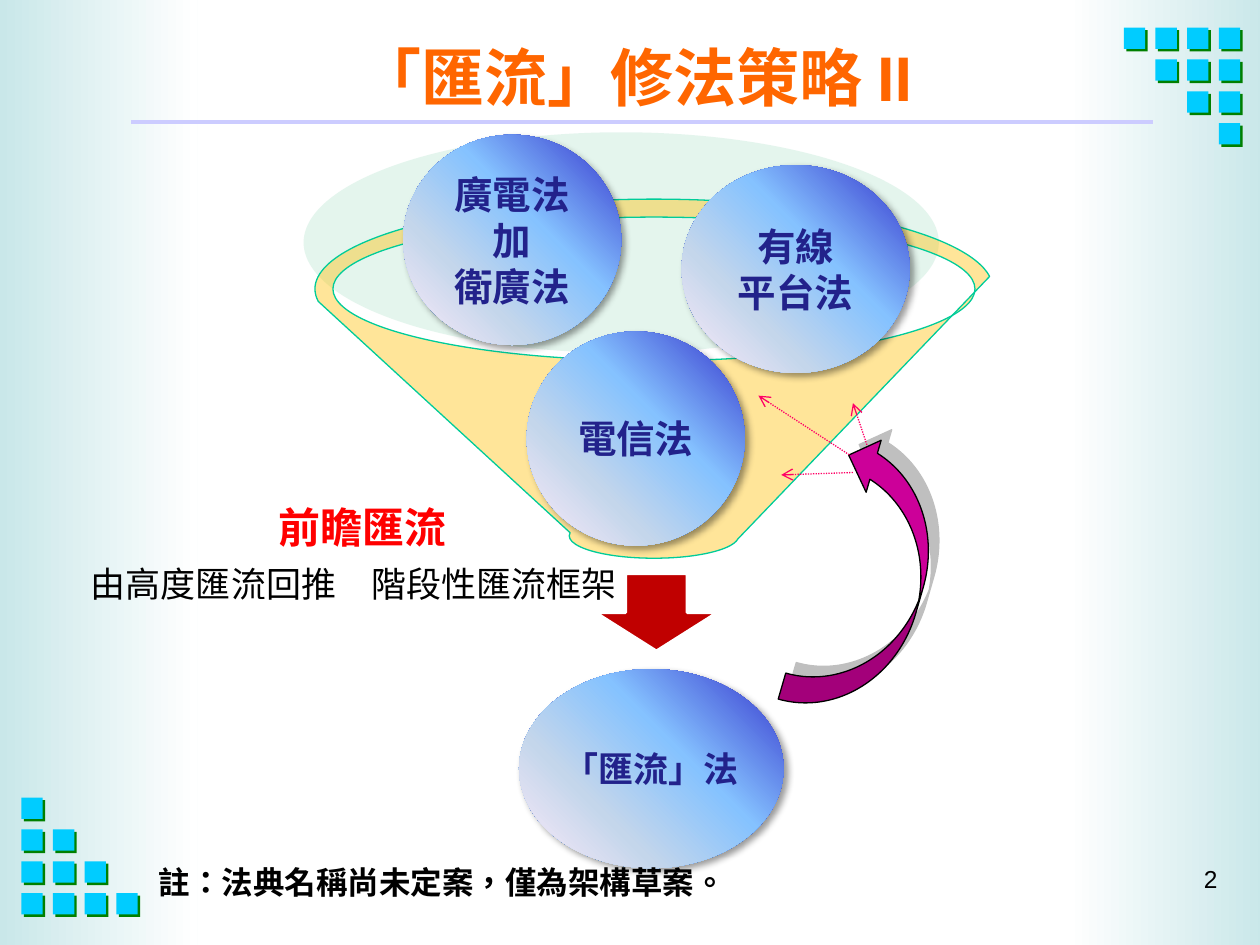
from lxml.etree import SubElement
from pptx import Presentation
from pptx.dml.color import RGBColor
from pptx.enum.dml import MSO_LINE
from pptx.enum.shapes import MSO_CONNECTOR, MSO_SHAPE
from pptx.enum.text import MSO_ANCHOR, PP_ALIGN
from pptx.oxml.ns import qn
from pptx.util import Pt

COLORS = {
    "mist": "C9E7E9", "white": "FFFFFF", "rule": "CCCCFF",
    "square": "00CCFF", "square_shade": "008000", "halo": "BDE7D4",
    "down": "C00000", "funnel": "FFC000", "funnel_edge": "00CC99",
    "indigo": "3333CC", "sky": "85C2FF", "haze": "C4D6EB", "blush": "FFEBFA",
    "law": "22228B", "feedback": "CC0099", "feedback_shade": "808080",
    "ray": "FF0066", "black": "000000", "red": "FF0000", "title": "FF6600",
}
CJK = "Noto Sans CJK SC"
BALL = [(0, "indigo"), (40, "sky"), (70, "haze"), (100, "blush")]


def add_piece(kind, box, fill, angle=0, alpha=100, line=None, weight=0.75, shadow=None):
    piece = slide.shapes.add_shape(kind, *map(Pt, box))
    properties = piece.fill._xPr
    if isinstance(fill, list):
        piece.fill.gradient()
        piece.fill.gradient_angle = angle
        stops = properties.find(".//" + qn("a:gsLst"))
        for stop in list(stops):
            stops.remove(stop)
        for position, color in fill:
            stop = SubElement(stops, qn("a:gs"), pos=str(position * 1000))
            SubElement(stop, qn("a:srgbClr"), val=COLORS[color])
    else:
        piece.fill.solid()
        piece.fill.fore_color.rgb = RGBColor.from_string(COLORS[fill])
        if alpha < 100:
            tint = properties.find(".//" + qn("a:srgbClr"))
            SubElement(tint, qn("a:alpha"), val=str(alpha * 1000))
    if line:
        piece.line.color.rgb = RGBColor.from_string(COLORS[line])
        piece.line.width = Pt(weight)
    else:
        piece.line.fill.background()
    piece.shadow.inherit = False
    if shadow:
        color, opacity, blur, distance, direction = shadow
        outer = SubElement(
            properties.find(qn("a:effectLst")), qn("a:outerShdw"),
            blurRad=str(Pt(blur)), dist=str(Pt(distance)),
            dir=str(direction * 60000), algn="ctr", rotWithShape="0")
        tint = SubElement(outer, qn("a:srgbClr"), val=COLORS[color])
        SubElement(tint, qn("a:alpha"), val=str(opacity * 1000))
    return piece


def add_run(paragraph, text, size, color, bold=False, face="Arial"):
    run = paragraph.add_run()
    run.text = text
    run.font.size = Pt(size)
    run.font.bold = bold
    run.font.name = face
    run.font.color.rgb = RGBColor.from_string(COLORS[color])
    marks = run.font._element
    marks.set("lang", "zh-TW")
    SubElement(marks, qn("a:ea"), typeface=CJK)


deck = Presentation()
deck.slide_width, deck.slide_height = Pt(720), Pt(540)
slide = deck.slides.add_slide(deck.slide_layouts[6])

add_piece(MSO_SHAPE.RECTANGLE, (610, 0, 113, 540), [(0, "white"), (100, "mist")])
add_piece(MSO_SHAPE.RECTANGLE, (0, 0, 113, 540), [(0, "mist"), (100, "white")])

rule = slide.shapes.add_connector(MSO_CONNECTOR.STRAIGHT, Pt(75), Pt(69.8), Pt(659), Pt(69.8))
rule.line.color.rgb = RGBColor.from_string(COLORS["rule"])
rule.line.width = Pt(2.25)
SubElement(rule._element.spPr, qn("a:effectLst"))

for column in range(4):
    for row in range(4):
        corners = []
        if row >= column:
            corners.append((12.2, 455.8))
        if row <= column:
            corners.append((642.2, 15.8))
        for left, top in corners:
            x, y = left + 18.1 * column, top + 18.2 * row
            add_piece(MSO_SHAPE.RECTANGLE, (x + 1.4, y + 1.4, 12.2, 12.2), "square_shade")
            add_piece(MSO_SHAPE.RECTANGLE, (x, y, 12.2, 12.2), "square")

add_piece(MSO_SHAPE.OVAL, (173.5, 75.6, 363, 126), "halo", alpha=40)
add_piece(MSO_SHAPE.DOWN_ARROW, (339.8, 327.6, 70.6, 44.6), "down", line="white", weight=2)

outlook = slide.shapes.add_textbox(Pt(38.2), Pt(275.8), Pt(337.7), Pt(84.2)).text_frame
outlook.word_wrap = True
outlook.vertical_anchor = MSO_ANCHOR.MIDDLE
outlook.margin_left = outlook.margin_right = Pt(13.7)
outlook.margin_top = outlook.margin_bottom = Pt(13.7)
heading = outlook.paragraphs[0]
heading.alignment = PP_ALIGN.CENTER
add_run(heading, "前瞻匯流", 24, "red", bold=True)
detail = outlook.add_paragraph()
add_run(detail, "由高度匯流回推　階段性匯流框架", 20, "black")
for paragraph, gap in ((heading, 8.4), (detail, 7)):
    paragraph.line_spacing = 0.9
    paragraph.space_after = Pt(gap)

add_piece(MSO_SHAPE.FUNNEL, (180, 113.8, 387.4, 205.2), "funnel", alpha=40, line="funnel_edge")

laws = [
    ((230.4, 77, 124.6, 120.2), 22, ["廣電法加", "衛廣法"]),
    ((301, 189.4, 124.6, 122.4), 22, ["電信法"]),
    ((389.5, 94.3, 130.3, 118.8), 22, ["有線", "平台法"]),
    ((296.6, 382.3, 151.2, 113.8), 20, ["「匯流」法"]),
]
for box, size, lines in laws:
    law = add_piece(MSO_SHAPE.OVAL, box, BALL, angle=225, shadow=("black", 40, 4, 3, 45))
    frame = law.text_frame
    frame.word_wrap = True
    frame.vertical_anchor = MSO_ANCHOR.MIDDLE
    frame.margin_left = frame.margin_right = Pt(2.9)
    frame.margin_top = frame.margin_bottom = Pt(3.6)
    for index, text in enumerate(lines):
        paragraph = frame.add_paragraph() if index else frame.paragraphs[0]
        paragraph.alignment = PP_ALIGN.CENTER
        add_run(paragraph, text, size, "law", bold=True)

feedback = add_piece(
    MSO_SHAPE.CURVED_LEFT_ARROW, (465.8, 250.6, 61.9, 160.6), "feedback",
    line="black", shadow=("feedback_shade", 50, 0, 8.5, 315))
feedback.rotation = 16.1
feedback._element.spPr.find(qn("a:xfrm")).set("flipV", "1")

rays = [
    (485.3, 259.9, 433.4, 226.1),
    (487.4, 270, 446.4, 271.4),
    (495.4, 254.2, 487.4, 230.4),
]
for ends in rays:
    ray = slide.shapes.add_connector(MSO_CONNECTOR.STRAIGHT, *map(Pt, ends))
    ray.line.color.rgb = RGBColor.from_string(COLORS["ray"])
    ray.line.width = Pt(0.75)
    ray.line.dash_style = MSO_LINE.ROUND_DOT
    SubElement(ray.line._get_or_add_ln(), qn("a:tailEnd"), type="arrow")
    SubElement(ray._element.spPr, qn("a:effectLst"))

captions = [
    ((553, 490.3, 149.8, 36), PP_ALIGN.RIGHT, True, [("2", 14, "black", False, "Arial")]),
    ((187.2, 18.7, 352, 51.1), PP_ALIGN.CENTER, False,
     [("「匯流」修法策略 ", 36, "title", True, CJK), ("II", 36, "title", True, "Arial")]),
    ((83.5, 489.6, 519, 28.8), PP_ALIGN.LEFT, True,
     [("註：法典名稱尚未定案，僅為架構草案。", 18, "black", True, CJK)]),
]
for box, alignment, wrap, runs in captions:
    frame = slide.shapes.add_textbox(*map(Pt, box)).text_frame
    frame.word_wrap = wrap
    frame.paragraphs[0].alignment = alignment
    for run in runs:
        add_run(frame.paragraphs[0], *run)

deck.save("out.pptx")
